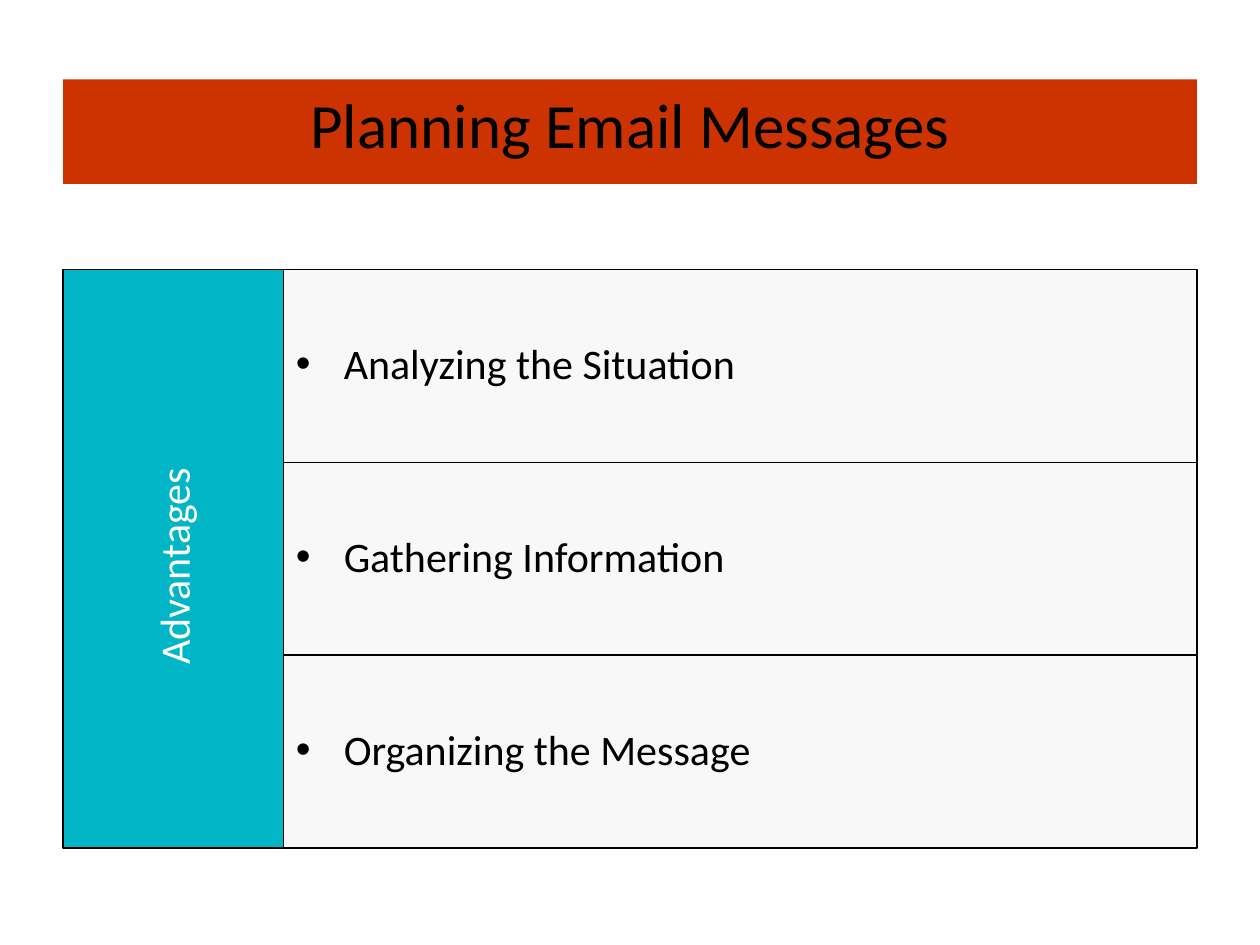
from lxml.etree import SubElement
from pptx import Presentation
from pptx.dml.color import RGBColor
from pptx.enum.shapes import MSO_SHAPE as SHAPE
from pptx.enum.text import MSO_ANCHOR as ANCHOR, MSO_AUTO_SIZE as FIT, PP_ALIGN as ALIGN
from pptx.oxml.ns import qn
from pptx.util import Inches, Pt

WIDTH, HEIGHT = 10, 7.5
MARGIN = 0.5
CONTENT_W = WIDTH - 2 * MARGIN
TABLE_TOP, ROW_H = 2.14, 1.53
SIDE_W = 1.75
LABEL_W, LABEL_H = 1.88, 0.5
INDENT = 0.38

RED, TEAL, GREY = "CC3300", "00B5C6", "F8F8F8"
BLACK, WHITE = "000000", "FFFFFF"
STEPS = ["Analyzing the Situation", "Gathering Information", "Organizing the Message"]


def paint(fill, color):
    fill.solid()
    fill.fore_color.rgb = RGBColor.from_string(color)


def write(sp, text, size, color, align=ALIGN.LEFT, **frame):
    """Put one paragraph in a shape; frame holds text frame settings."""
    tf = sp.text_frame
    for name, value in frame.items():
        setattr(tf, name, value)
    p = tf.paragraphs[0]
    p.alignment = align
    r = p.add_run()
    r.text = text
    for name, value in {"name": "Calibri", "size": Pt(size)}.items():
        setattr(r.font, name, value)
    paint(r.font.fill, color)
    return p


def add_bullet(p):
    p.line_spacing = 0.9
    pPr = p._p.get_or_add_pPr()
    pPr.set("marL", str(Inches(INDENT)))
    pPr.set("indent", str(-Inches(INDENT)))
    SubElement(pPr, qn("a:buFont"), typeface="Arial")
    SubElement(pPr, qn("a:buChar"), char="•")


def add_panel(slide, x, y, w, h, color):
    sp = slide.shapes.add_shape(SHAPE.RECTANGLE, *map(Inches, (x, y, w, h)))
    sp.shadow.inherit = False
    paint(sp.fill, color)
    paint(sp.line.fill, BLACK)
    sp.line.width = Pt(0.75)
    return sp


def add_title(slide, text):
    sp = slide.shapes.title
    box = {"left": MARGIN, "top": 0.63, "width": CONTENT_W, "height": 0.83}
    for name, value in box.items():
        setattr(sp, name, Inches(value))
    paint(sp.fill, RED)
    write(sp, text, 36, BLACK, ALIGN.CENTER,
          vertical_anchor=ANCHOR.TOP, auto_size=FIT.NONE)


def add_side_label(slide, text):
    """Teal panel beside all rows, with text that reads upwards."""
    table_h = ROW_H * len(STEPS)
    add_panel(slide, MARGIN, TABLE_TOP, SIDE_W, table_h, TEAL)
    x = MARGIN + (SIDE_W - LABEL_W) / 2
    y = TABLE_TOP + (table_h - LABEL_H) / 2
    sp = slide.shapes.add_textbox(*map(Inches, (x, y, LABEL_W, LABEL_H)))
    sp.rotation = 270
    paint(sp.fill, TEAL)
    write(sp, text, 24, WHITE, word_wrap=False, auto_size=FIT.SHAPE_TO_FIT_TEXT)


def add_step(slide, row, text):
    sp = add_panel(slide, MARGIN + SIDE_W, TABLE_TOP + row * ROW_H,
                   CONTENT_W - SIDE_W, ROW_H, GREY)
    add_bullet(write(sp, text, 24, BLACK, word_wrap=True,
                     vertical_anchor=ANCHOR.MIDDLE))


def main():
    prs = Presentation()
    prs.slide_width, prs.slide_height = Inches(WIDTH), Inches(HEIGHT)
    slide = prs.slides.add_slide(prs.slide_layouts[5])
    add_title(slide, "Planning Email Messages")
    add_side_label(slide, "Advantages")
    for row, text in enumerate(STEPS):
        add_step(slide, row, text)
    prs.save("out.pptx")


if __name__ == "__main__":
    main()
